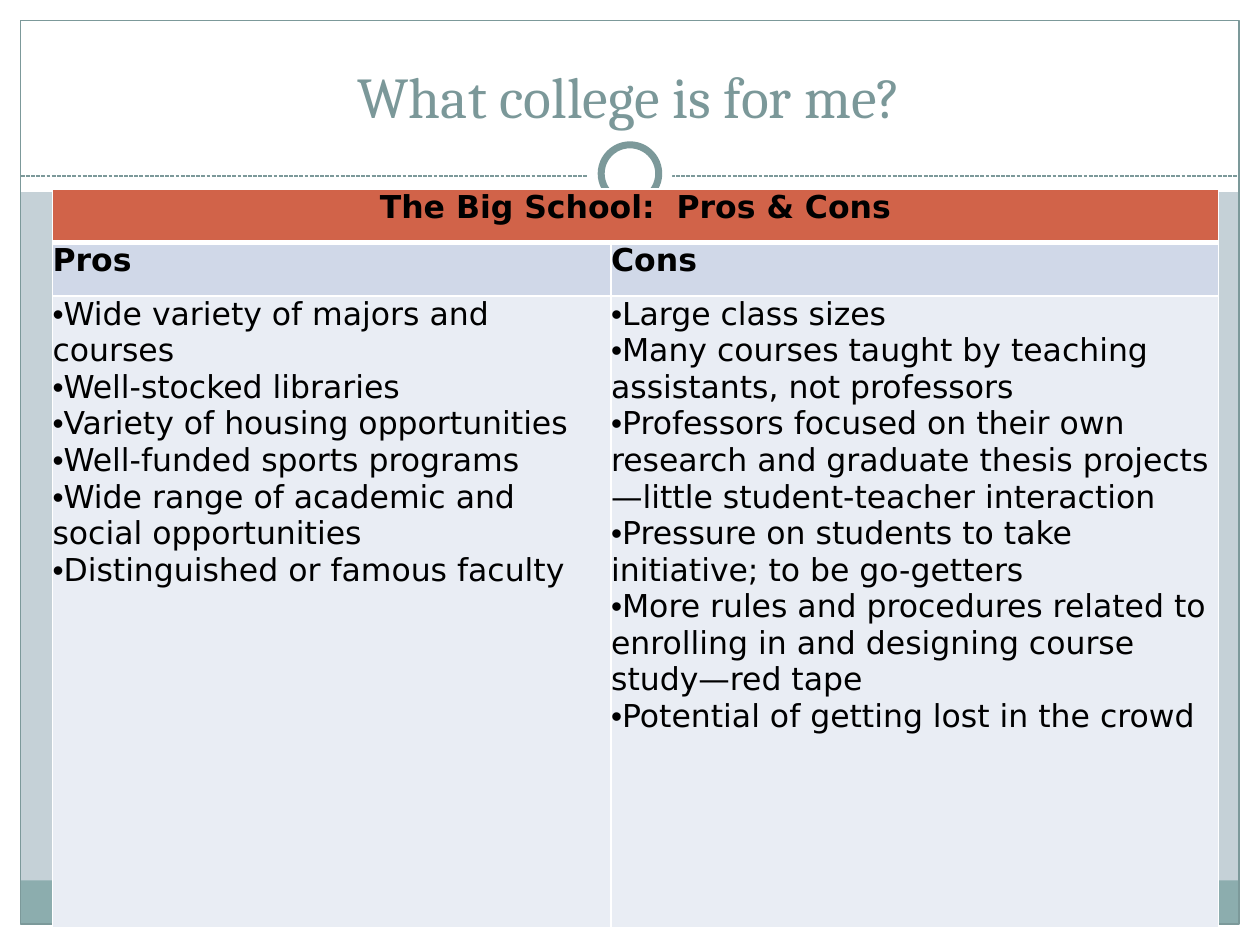
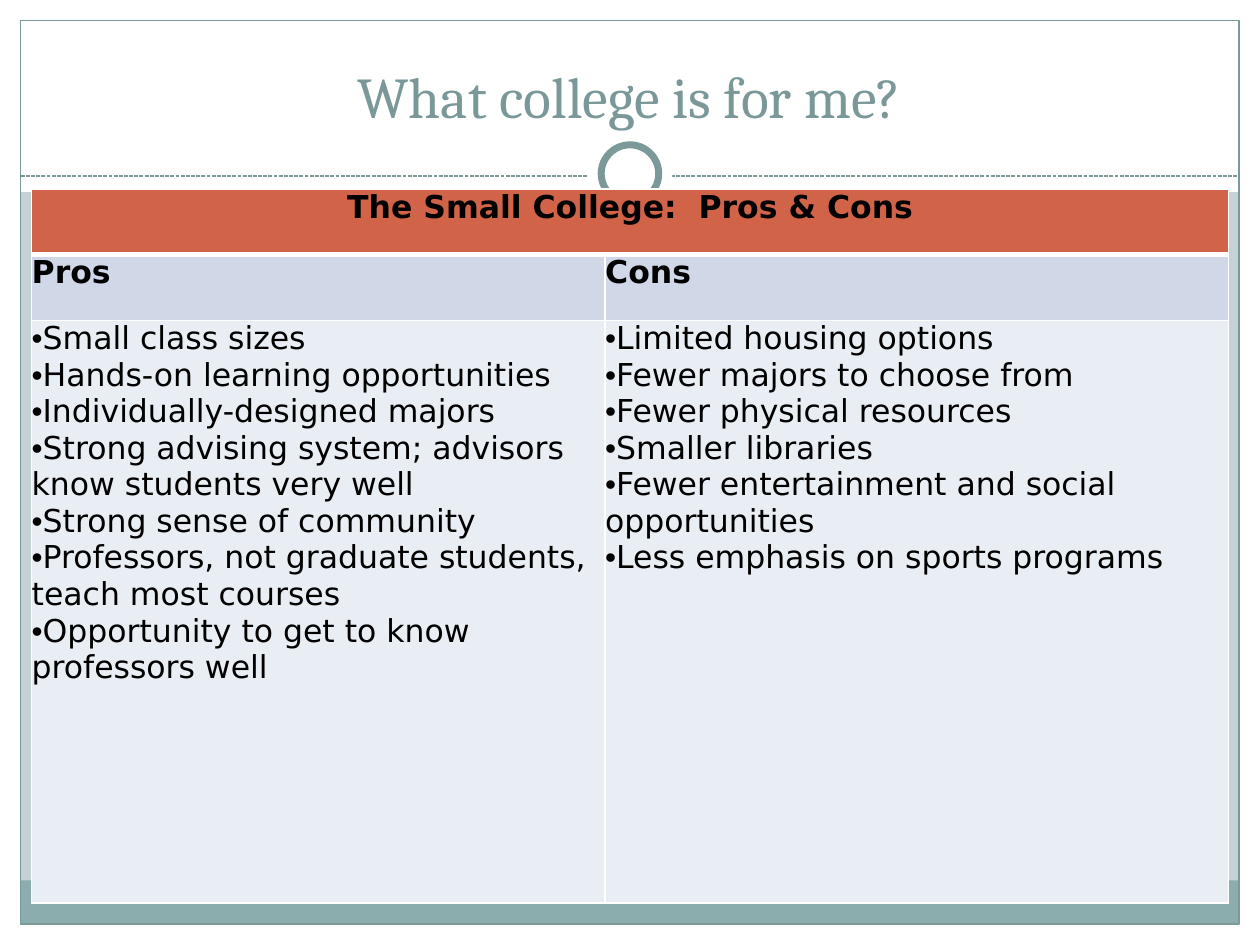
"""Builds two slides that weigh big schools against small colleges."""
from lxml.etree import SubElement as Sub
from pptx import Presentation
from pptx.dml.color import RGBColor
from pptx.enum.dml import MSO_LINE as Dash
from pptx.enum.shapes import MSO_CONNECTOR as Link, MSO_SHAPE as Kind
from pptx.enum.text import MSO_ANCHOR as Anchor, PP_ALIGN as Align
from pptx.oxml.ns import qn
from pptx.util import Cm, Pt


def hue(code):
    return RGBColor.from_string(code)


def style(font, look, color):
    for key, value in look.items():
        setattr(font, key, value)
    font.color.rgb = hue(color)


WHITE, BLACK, TEAL, GREY = "FFFFFF", "000000", "8CADAE", "7C999A"
FILLS = ["D16349", "D0D8E8", "E9EDF4"]
HEAD = {"name": "Cambria", "size": Pt(33)}
BODY = {"name": "DejaVu Sans", "size": Pt(18)}
WIDE, HIGH, EDGE, RULE = 25.4, 19.05, 0.42, 3.55

SHAPES = [
    (Kind.RECTANGLE, 0, HIGH - EDGE, WIDE, EDGE, WHITE, 0),
    (Kind.RECTANGLE, 0, 0, WIDE, 3.87, WHITE, 0),
    (Kind.RECTANGLE, 0, 0, EDGE, HIGH, WHITE, 0),
    (Kind.RECTANGLE, WIDE - EDGE, 0, EDGE, HIGH, WHITE, 0),
    (Kind.RECTANGLE, EDGE, 17.75, WIDE - 2 * EDGE, 0.87, TEAL, 0),
    (Kind.RECTANGLE, EDGE, EDGE, WIDE - 2 * EDGE, HIGH - 2 * EDGE, None, 0.75),
    (Kind.OVAL, 11.85, 2.67, 1.7, 1.7, WHITE, 0),
    (Kind.OVAL, 12.12, 2.92, 1.16, 1.16, WHITE, 4),
]

PAGES = [
    {
        "head": "The Big School:  Pros & Cons",
        "left": 1.06, "cols": [11.26, 12.24], "rows": [1.08, 1.08, 12.73],
        "pros": [
            "Wide variety of majors and courses",
            "Well-stocked libraries",
            "Variety of housing opportunities",
            "Well-funded sports programs",
            "Wide range of academic and social opportunities",
            "Distinguished or famous faculty",
        ],
        "cons": [
            "Large class sizes",
            "Many courses taught by teaching assistants, not professors",
            "Professors focused on their own research and graduate thesis "
            "projects—little student-teacher interaction",
            "Pressure on students to take initiative; to be go-getters",
            "More rules and procedures related to enrolling in and designing "
            "course study—red tape",
            "Potential of getting lost in the crowd",
        ],
    },
    {
        "head": "The Small College:  Pros & Cons",
        "left": 0.64, "cols": [11.56, 12.57], "rows": [1.32, 1.33, 11.74],
        "pros": [
            "Small class sizes",
            "Hands-on learning opportunities",
            "Individually-designed majors",
            "Strong advising system; advisors know students very well",
            "Strong sense of community",
            "Professors, not graduate students, teach most courses",
            "Opportunity to get to know professors well",
        ],
        "cons": [
            "Limited housing options",
            "Fewer majors to choose from",
            "Fewer physical resources",
            "Smaller libraries",
            "Fewer entertainment and social opportunities",
            "Less emphasis on sports programs",
        ],
    },
]

deck = Presentation()
deck.slide_width, deck.slide_height = Cm(WIDE), Cm(HIGH)
base = deck.slide_layouts[5]
base.background.fill.solid()
base.background.fill.fore_color.rgb = hue("C5D1D7")
for holder in list(base.placeholders)[1:]:
    holder.element.getparent().remove(holder.element)
slides = [deck.slides.add_slide(base) for page in PAGES]

pen = slides[0].shapes
decor = []
for kind, left, top, width, height, fill, weight in SHAPES:
    if kind == Kind.OVAL and len(decor) == 6:
        rule = pen.add_connector(
            Link.STRAIGHT, Cm(EDGE), Cm(RULE), Cm(WIDE - EDGE), Cm(RULE))
        rule.line.color.rgb = hue(GREY)
        rule.line.width = Pt(0.75)
        rule.line.dash_style = Dash.SQUARE_DOT
        Sub(rule.element.spPr, qn("a:effectLst"))
        decor.append(rule)
    part = pen.add_shape(kind, Cm(left), Cm(top), Cm(width), Cm(height))
    part.shadow.inherit = False
    if fill:
        part.fill.solid()
        part.fill.fore_color.rgb = hue(fill)
    else:
        part.fill.background()
    if weight:
        part.line.color.rgb = hue(GREY)
        part.line.width = Pt(weight)
    else:
        part.line.fill.background()
    decor.append(part)
for part in decor:
    base.shapes.element.append(part.element)

for slide, page in zip(slides, PAGES):
    title = slide.shapes.title
    title.left, title.top = Cm(0.84), Cm(0.64)
    title.width, title.height = Cm(23.7), Cm(2.11)
    title.text = "What college is for me?"
    title.text_frame.vertical_anchor = Anchor.BOTTOM
    para = title.text_frame.paragraphs[0]
    para.alignment = Align.CENTER
    style(para.runs[0].font, HEAD, "7B9899")

    cols, rows = page["cols"], page["rows"]
    table = slide.shapes.add_table(
        len(rows), len(cols), Cm(page["left"]), Cm(3.81),
        Cm(sum(cols)), Cm(sum(rows))).table
    for col, width in zip(table.columns, cols):
        col.width = Cm(width)
    for row, height in zip(table.rows, rows):
        row.height = Cm(height)
    table.cell(0, 0).merge(table.cell(0, 1))

    texts = [[[page["head"]], []], [["Pros"], ["Cons"]],
             [page["pros"], page["cons"]]]
    for y, line in enumerate(texts):
        for x, items in enumerate(line):
            cell = table.cell(y, x)
            for side in ("left", "right", "top", "bottom"):
                setattr(cell, f"margin_{side}", 0)
            props = cell._tc.get_or_add_tcPr()
            for side in "LRTB":
                thick = (y, side) in [(0, "B"), (1, "T")]
                edge = Sub(props, qn(f"a:ln{side}"), w=str(Pt(3 if thick else 1)))
                Sub(Sub(edge, qn("a:solidFill")), qn("a:srgbClr"), val=WHITE)
            cell.fill.solid()
            cell.fill.fore_color.rgb = hue(FILLS[y])
            if not items:
                continue
            cell.text = "\n".join(items)
            for para in cell.text_frame.paragraphs:
                para.alignment = Align.LEFT if y else Align.CENTER
                style(para.runs[0].font, {**BODY, "bold": y < 2}, BLACK)
                if y == 2:
                    bullet = para._p.get_or_add_pPr()
                    Sub(bullet, qn("a:buFont"), typeface="Arial")
                    Sub(bullet, qn("a:buChar"), char="•")

deck.save("out.pptx")
